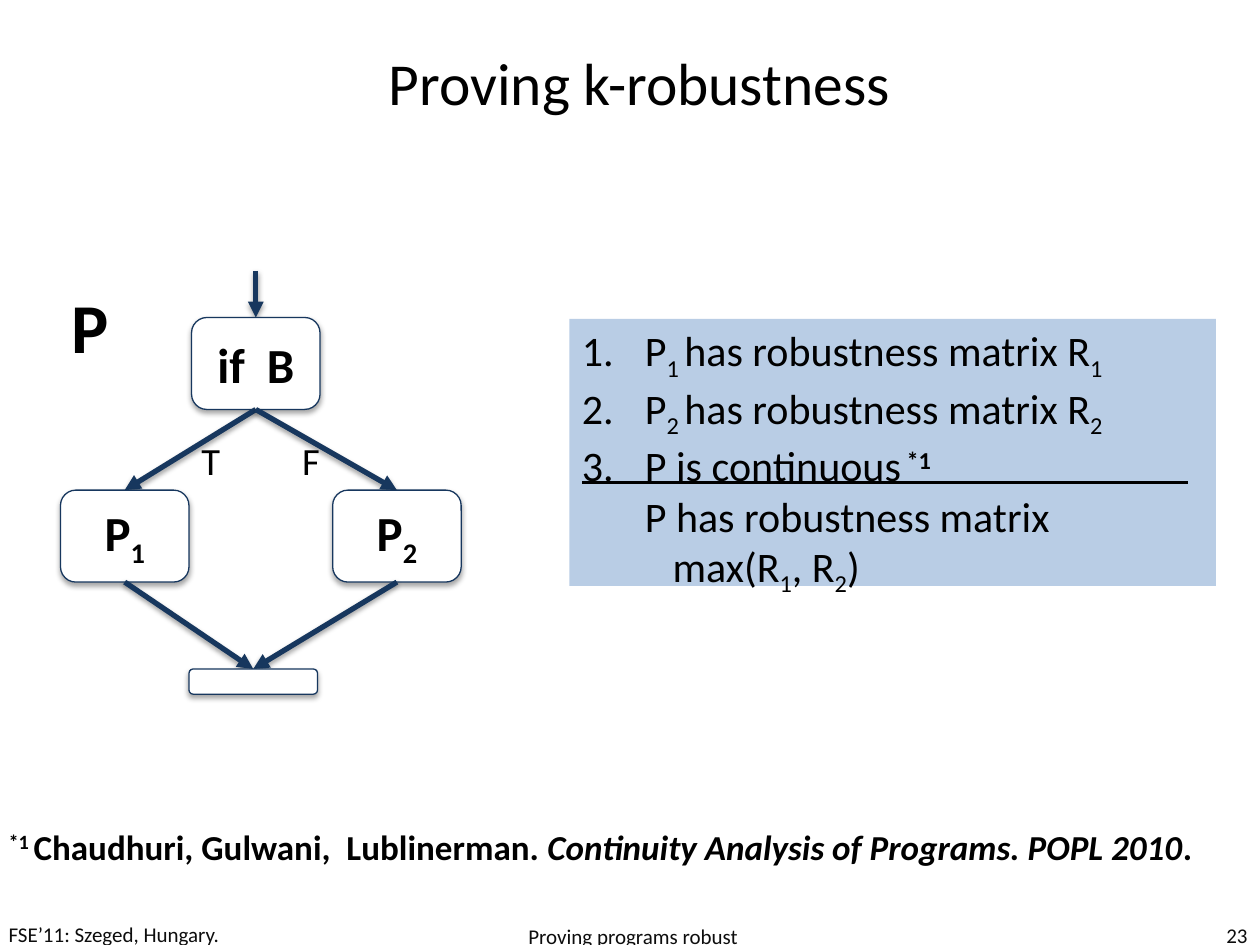
from lxml import etree
from pptx import Presentation
from pptx.dml.color import RGBColor
from pptx.enum import shapes, text
from pptx.oxml import ns
from pptx.util import Inches, Pt

BLACK = RGBColor(0, 0, 0)
WHITE = RGBColor(255, 255, 255)
NAVY = RGBColor(0x17, 0x37, 0x5E)
PALE = RGBColor(0xB9, 0xCD, 0xE5)
GREY = RGBColor(0x0D, 0x0D, 0x0D)
LEFT, MID, RIGHT = text.PP_ALIGN.LEFT, text.PP_ALIGN.CENTER, text.PP_ALIGN.RIGHT
BASE = {"sub": "-25000", "super": "30000"}


def add_tag(parent, tag, **attrs):
    node = etree.SubElement(parent, ns.qn("a:" + tag))
    for key, val in attrs.items():
        node.set(key, str(val))
    return node


def add_shadow(shape, alpha, dist):
    """Cast a soft shadow straight down; alpha in percent, dist in points."""
    effects = add_tag(shape.element.spPr, "effectLst")
    outer = add_tag(effects, "outerShdw", blurRad=Pt(3.1), dist=Pt(dist),
                    dir=90 * 60000, rotWithShape=0)
    color = add_tag(outer, "srgbClr", val="000000")
    add_tag(color, "alpha", val=alpha * 1000)


def fill_para(para, parts, size, color=BLACK, bold=False, align=LEFT):
    """Write runs; each part is a string or a (string, styles) pair."""
    para.alignment = align
    for part in parts:
        words, style = (part, "") if isinstance(part, str) else part
        run = para.add_run()
        run.text = words
        font = run.font
        font.name, font.size, font.color.rgb = "Calibri", Pt(size), color
        font.bold = bold or "bold" in style
        font.italic = "italic" in style
        for name, shift in BASE.items():
            if name in style:
                run._r.get_or_add_rPr().set("baseline", shift)


def add_label(slide, box, parts, size, wrap=True, anchor=text.MSO_ANCHOR.TOP,
              **look):
    frame = slide.shapes.add_textbox(*map(Inches, box)).text_frame
    frame.word_wrap = wrap
    frame.vertical_anchor = anchor
    fill_para(frame.paragraphs[0], parts, size, **look)


def add_node(slide, x, y, high, parts=()):
    """Add a flowchart box with its top centre at x, y."""
    wide = 1.02
    node = slide.shapes.add_shape(
        shapes.MSO_SHAPE.ROUNDED_RECTANGLE,
        *map(Inches, (x - wide / 2, y, wide, high)))
    node.fill.solid()
    node.fill.fore_color.rgb = WHITE
    node.line.color.rgb = NAVY
    node.line.width = Pt(0.75)
    add_shadow(node, 35, 1.8)
    if parts:
        frame = node.text_frame
        frame.margin_left = frame.margin_right = Inches(0.05)
        frame.margin_top = frame.margin_bottom = Inches(0.05)
        frame.vertical_anchor = text.MSO_ANCHOR.MIDDLE
        fill_para(frame.paragraphs[0], parts, 28, bold=True, align=MID)


def add_line(slide, start, end, color, width):
    line = slide.shapes.add_connector(
        shapes.MSO_CONNECTOR.STRAIGHT, *map(Inches, start + end))
    line.line.color.rgb = color
    line.line.width = Pt(width)
    return line


def add_arrow(slide, start, end):
    arrow = add_line(slide, start, end, NAVY, 3)
    add_tag(arrow.line._get_or_add_ln(), "tailEnd", type="triangle")
    add_shadow(arrow, 38, 1.6)


def add_flow(slide):
    top, left, right, join = (2.03, 2.52), (0.99, 3.89), (3.15, 3.89), (2.01, 5.31)
    high = 0.73
    fork = (top[0], top[1] + high)
    add_arrow(slide, (top[0], 2.15), top)
    add_node(slide, *top, high, ["if  B"])
    for side, mark in ((left, "1"), (right, "2")):
        add_arrow(slide, fork, side)
        add_node(slide, *side, high, ["P", (mark, "sub")])
        add_arrow(slide, (side[0], side[1] + high), join)
    add_node(slide, *join, 0.2)
    add_label(slide, (1.5, 3.42, 0.35, 0.47), ["T"], 22, wrap=False)
    add_label(slide, (2.3, 3.42, 0.34, 0.47), ["F"], 22, wrap=False)
    add_label(slide, (0.47, 2.2, 0.42, 0.77), ["P"], 40, bold=True, align=MID)


def add_rule(slide):
    """Add the proof rule: numbered premises, a bar and the conclusion."""
    panel = slide.shapes.add_shape(
        shapes.MSO_SHAPE.RECTANGLE, *map(Inches, (4.52, 2.53, 5.13, 2.12)))
    panel.shadow.inherit = False
    panel.fill.solid()
    panel.fill.fore_color.rgb = PALE
    panel.line.fill.background()
    frame = panel.text_frame
    frame.word_wrap = True
    frame.vertical_anchor = text.MSO_ANCHOR.TOP
    premises = [["P", (f"{n} ", "sub"), "has robustness matrix R", (f"{n}", "sub")]
                for n in (1, 2)]
    premises.append(["P is continuous", (" *1", "bold super")])
    result = [["P has robustness matrix"],
              ["max(R", ("1", "sub"), ", R", ("2", "sub"), ")"]]
    for i, parts in enumerate(premises + result):
        para = frame.paragraphs[0] if i == 0 else frame.add_paragraph()
        fill_para(para, parts, 24)
        props = para._p.get_or_add_pPr()
        props.set("marL", str(Inches(0.72 if parts is result[-1] else 0.5)))
        if i < len(premises):
            props.set("indent", str(Inches(-0.5)))
            add_tag(props, "buFont", typeface="+mj-lt")
            add_tag(props, "buAutoNum", type="arabicPeriod")
    bar = add_line(slide, (4.62, 3.83), (9.43, 3.83), BLACK, 2)
    add_tag(bar.element.spPr, "effectLst")


def add_footer(slide):
    for box, words, align in (
            ((-0.03, 7.33, 2.33, 0.17), "FSE’11: Szeged, Hungary.", LEFT),
            ((3.44, 7.33, 3.17, 0.2), "Proving programs robust", MID),
            ((7.67, 7.33, 2.33, 0.18), "23", RIGHT)):
        add_label(slide, box, [words], 12, color=GREY, align=align,
                  anchor=text.MSO_ANCHOR.MIDDLE)


def main():
    deck = Presentation()
    deck.slide_width, deck.slide_height = Inches(10), Inches(7.5)
    slide = deck.slides.add_slide(deck.slide_layouts[5])
    title = slide.shapes.title
    title.left, title.top = Inches(0.5), Inches(0.17)
    title.width, title.height = Inches(9.15), Inches(0.95)
    title.text_frame.vertical_anchor = text.MSO_ANCHOR.MIDDLE
    fill_para(title.text_frame.paragraphs[0], ["Proving k-robustness"], 34,
              align=MID)
    add_flow(slide)
    add_rule(slide)
    add_label(slide, (-0.03, 6.5, 10, 0.77),
              [("*1 ", "super"), "Chaudhuri, Gulwani,  Lublinerman. ",
               ("Continuity Analysis of Programs. POPL 2010", "italic"), "."],
              20, bold=True)
    add_footer(slide)
    deck.save("out.pptx")


if __name__ == "__main__":
    main()
